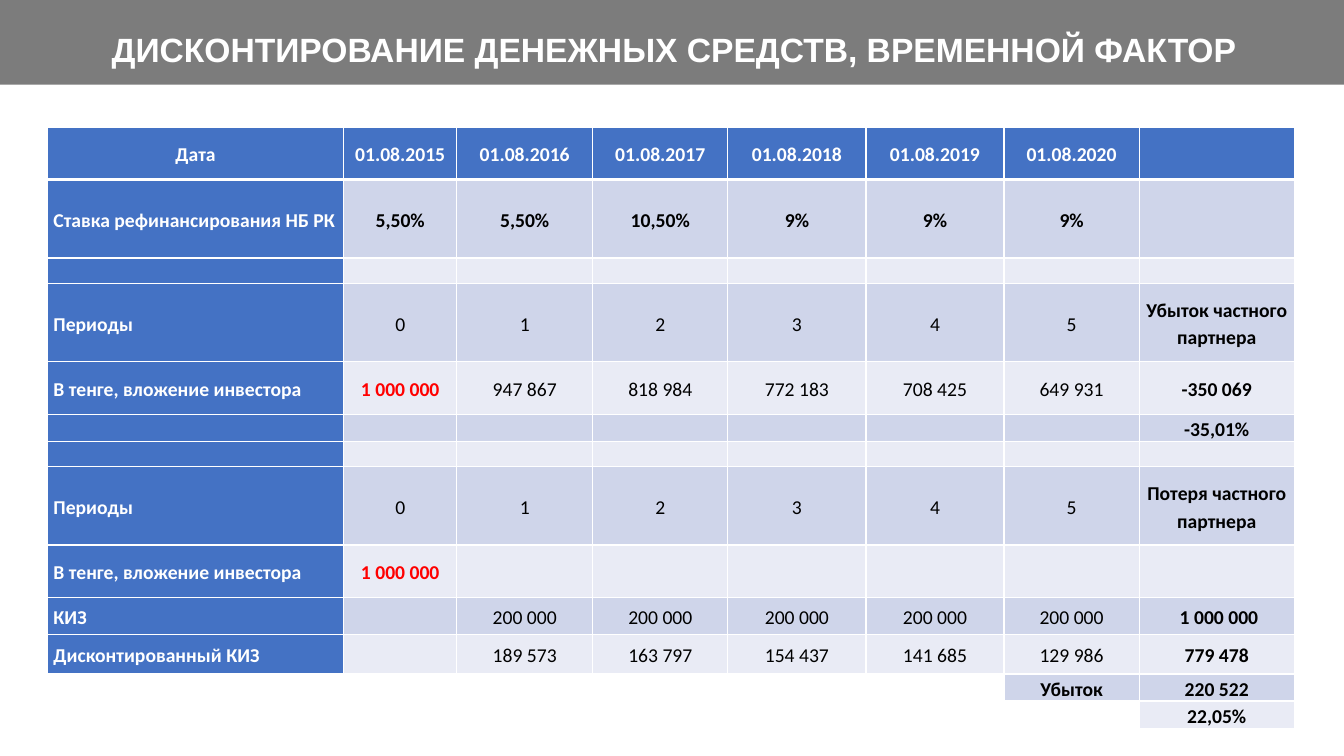
from dataclasses import dataclass

from lxml import etree
from pptx import Presentation
from pptx.dml.color import RGBColor
from pptx.enum.shapes import MSO_SHAPE
from pptx.enum.text import MSO_ANCHOR, MSO_AUTO_SIZE, PP_ALIGN
from pptx.oxml.ns import qn
from pptx.util import Inches, Pt

RECTANGLE = MSO_SHAPE.RECTANGLE
MIDDLE = MSO_ANCHOR.MIDDLE
GROW = MSO_AUTO_SIZE.SHAPE_TO_FIT_TEXT
LEFT, CENTER = PP_ALIGN.LEFT, PP_ALIGN.CENTER

TITLE = "ДИСКОНТИРОВАНИЕ ДЕНЕЖНЫХ СРЕДСТВ, ВРЕМЕННОЙ ФАКТОР"
INVESTMENT = "1 000 000"
ROWS = [
    ["Дата", "01.08.2015", "01.08.2016", "01.08.2017", "01.08.2018", "01.08.2019", "01.08.2020", ""],
    ["Ставка рефинансирования НБ РК", "5,50%", "5,50%", "10,50%", "9%", "9%", "9%", ""],
    [""] * 8,
    ["Периоды", "0", "1", "2", "3", "4", "5", "Убыток частного партнера"],
    ["В тенге, вложение инвестора", INVESTMENT, "947 867", "818 984", "772 183", "708 425", "649 931", "-350 069"],
    [""] * 7 + ["-35,01%"],
    [""] * 8,
    ["Периоды", "0", "1", "2", "3", "4", "5", "Потеря частного партнера"],
    ["В тенге, вложение инвестора", INVESTMENT] + [""] * 6,
    ["КИЗ", ""] + ["200 000"] * 5 + [" 1 000 000"],
    ["Дисконтированный КИЗ", "", "189 573", "163 797", "154 437", "141 685", "129 986", "779 478"],
    [""] * 6 + ["Убыток", "220 522"],
    [""] * 7 + ["22,05%"],
]
COLUMN_WIDTHS = [2.94, 1.12, 1.35, 1.34, 1.37, 1.37, 1.34, 1.54]
ROW_HEIGHTS = [0.52, 0.78, 0.25, 0.78, 0.52, 0.26, 0.25, 0.78, 0.52, 0.37, 0.39, 0.26, 0.26]
RATE_ROW = 1
TOTAL_COLUMN = 7
FIRST_FILLED_COLUMN = {11: 6, 12: 7}


@dataclass(frozen=True)
class Theme:
    banner: str = "7C7C7C"
    header: str = "4472C4"
    odd_band: str = "CFD5EA"
    even_band: str = "E9EBF5"
    white: str = "FFFFFF"
    black: str = "000000"
    red: str = "FF0000"
    title_font: str = "Arial"
    table_font: str = "Calibri"
    title_size: int = 24
    table_size: int = 14
    empty_size: int = 10
    thin_line: int = 1
    header_line: int = 3


THEME = Theme()


def write(frame, text, *, size, font, color, bold=True, align=CENTER):
    para = frame.paragraphs[0]
    para.alignment = align
    para.line_spacing = 1.15
    para.space_after = Pt(10)
    span = para.add_run()
    span.text = text
    span.font.size = Pt(size)
    span.font.name = font
    span.font.bold = bold
    span.font.color.rgb = RGBColor.from_string(color)


def set_border(cell, side, width):
    line = etree.SubElement(cell._tc.get_or_add_tcPr(), qn(f"a:ln{side}"), w=str(Pt(width)))
    fill = etree.SubElement(line, qn("a:solidFill"))
    etree.SubElement(fill, qn("a:srgbClr"), val=THEME.white)


def cell_fill(row, column):
    if column < FIRST_FILLED_COLUMN.get(row, 0):
        return THEME.white
    if row == 0 or column == 0:
        return THEME.header
    return THEME.odd_band if row % 2 else THEME.even_band


def text_format(row, column, text):
    if row == 0 or column == 0:
        return {"color": THEME.white, "align": CENTER if row == 0 else LEFT}
    if text == INVESTMENT and column == 1:
        return {"color": THEME.red}
    bold = row == RATE_ROW or column == TOTAL_COLUMN or row in FIRST_FILLED_COLUMN
    return {"color": THEME.black, "bold": bold}


def fill_cell(cell, row, column, text):
    cell.margin_left = cell.margin_right = Inches(0.06)
    cell.margin_top = cell.margin_bottom = 0
    cell.vertical_anchor = MIDDLE
    under_header = {0: "B", 1: "T"}.get(row)
    for side in "LRTB":
        set_border(cell, side, THEME.header_line if side == under_header else THEME.thin_line)
    cell.fill.solid()
    cell.fill.fore_color.rgb = RGBColor.from_string(cell_fill(row, column))
    if text:
        write(cell.text_frame, text, size=THEME.table_size, font=THEME.table_font,
              **text_format(row, column, text))
    else:
        para = cell.text_frame.paragraphs[0]
        etree.SubElement(para._p, qn("a:endParaRPr"), sz=str(THEME.empty_size * 100))


def add_banner(page, width):
    band = page.shapes.add_shape(RECTANGLE, 0, 0, width, Inches(0.84))
    band.shadow.inherit = False
    band.fill.solid()
    band.fill.fore_color.rgb = RGBColor.from_string(THEME.banner)
    band.line.fill.background()
    box = page.shapes.add_textbox(Inches(0.98), Inches(0.18), Inches(11.41), Inches(0.54))
    box.text_frame.word_wrap = True
    box.text_frame.auto_size = GROW
    write(box.text_frame, TITLE, size=THEME.title_size, font=THEME.title_font, color=THEME.white)


def add_discount_table(page):
    frame = page.shapes.add_table(len(ROWS), len(COLUMN_WIDTHS), Inches(0.47), Inches(1.26),
                                  Inches(sum(COLUMN_WIDTHS)), Inches(sum(ROW_HEIGHTS)))
    table = frame.table
    table.horz_banding = False
    for column, width in zip(table.columns, COLUMN_WIDTHS):
        column.width = Inches(width)
    for row, height in zip(table.rows, ROW_HEIGHTS):
        row.height = Inches(height)
    for row, texts in enumerate(ROWS):
        for column, text in enumerate(texts):
            fill_cell(table.cell(row, column), row, column, text)


def main():
    deck = Presentation()
    deck.slide_width, deck.slide_height = Inches(13.33), Inches(7.5)
    page = deck.slides.add_slide(deck.slide_layouts[6])
    add_banner(page, deck.slide_width)
    add_discount_table(page)
    deck.save("out.pptx")


if __name__ == "__main__":
    main()
